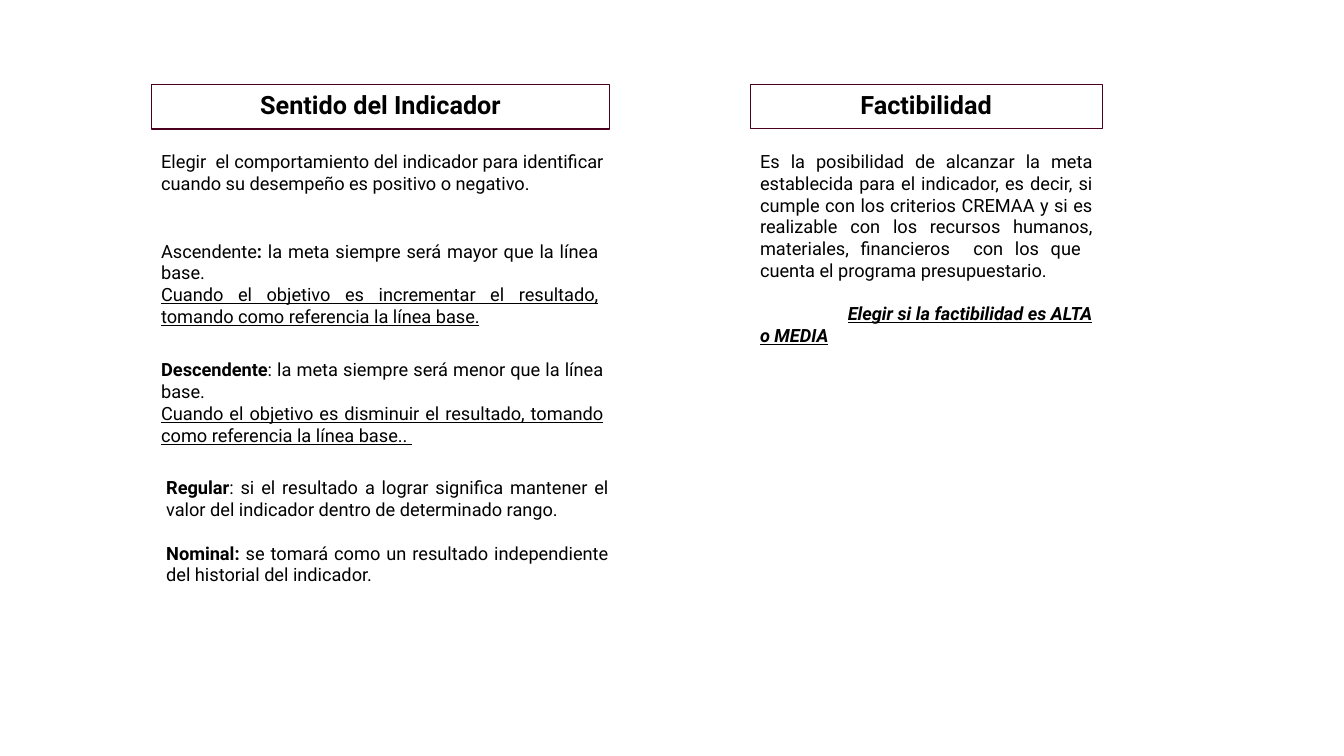
from pptx import Presentation
from pptx.dml.color import RGBColor
from pptx.enum import shapes, text
from pptx.util import Inches, Pt

LEFT, RIGHT = 1.5, 7.44      # column edges
HEAD, BODY = 0.84, 1.44      # row tops
LINE = 15.3                  # one body line, in points


def paint(code):
    return RGBColor.from_string(code)


class Deck:
    font, ink, edge = "Roboto", "000000", "4A001F"

    def __init__(self):
        self.prs = Presentation()
        self.prs.slide_width = Inches(13.33)
        self.prs.slide_height = Inches(7.5)
        self.slide = self.prs.slides.add_slide(self.prs.slide_layouts[5])

    def frame(self, shape):
        frame = shape.text_frame
        frame.word_wrap = True
        frame.auto_size = text.MSO_AUTO_SIZE.NONE
        frame.vertical_anchor = text.MSO_ANCHOR.TOP
        frame.margin_left = frame.margin_right = Inches(0.1)
        frame.margin_top = frame.margin_bottom = Inches(0.05)
        return frame

    def run(self, para, words, size, style=""):
        run = para.add_run()
        run.text = words
        font = run.font
        font.name, font.size = self.font, Pt(size)
        font.color.rgb = paint(self.ink)
        font.bold, font.italic = "b" in style, "i" in style
        font.underline = "u" in style

    def head(self, shape, words):
        shape.line.color.rgb = paint(self.edge)
        shape.line.width = Pt(0.75)
        shape.fill.background()
        para = self.frame(shape).paragraphs[0]
        para.alignment = text.PP_ALIGN.CENTER
        self.run(para, words, 18, "b")

    def title(self, x, y, w, words):
        shape = self.slide.shapes.title
        shape.left, shape.top = Inches(x), Inches(y)
        shape.width, shape.height = Inches(w), Inches(0.44)
        self.head(shape, words)

    def label(self, x, y, w, words):
        shape = self.slide.shapes.add_shape(
            shapes.MSO_SHAPE.RECTANGLE, Inches(x), Inches(y), Inches(w), Inches(0.44))
        shape.shadow.inherit = False
        self.head(shape, words)

    def body(self, x, y, w, h, paras, gap=0, indent=0):
        """Justified text; gap and indent apply to paragraphs after the first."""
        box = self.slide.shapes.add_textbox(Inches(x), Inches(y), Inches(w), Inches(h))
        frame = self.frame(box)
        for i, runs in enumerate(paras):
            para = frame.add_paragraph() if i else frame.paragraphs[0]
            para.alignment = text.PP_ALIGN.JUSTIFY
            if i and gap:
                para.space_before = Pt(gap)
            if i and indent:
                para._p.get_or_add_pPr().set("indent", str(Inches(indent)))
            for words, style in runs:
                self.run(para, words, 13, style)


def main():
    deck = Deck()

    # Headings
    deck.title(LEFT, HEAD, 4.55, "Sentido del Indicador")
    deck.label(RIGHT, HEAD, 3.49, "Factibilidad")

    # Indicator direction
    deck.body(LEFT, BODY, 4.58, 0.54, [
        [("Elegir  el comportamiento del indicador para identificar cuando su "
          "desempeño es positivo o negativo.", "")]])
    deck.body(LEFT, 2.33, 4.53, 0.98, [
        [("Ascendente", ""), (": ", "b"),
         ("la meta siempre será mayor que la línea base.", "")],
        [("Cuando el objetivo es incrementar el resultado, tomando como "
          "referencia la línea base.", "u")]])
    deck.body(LEFT, 3.51, 4.58, 0.98, [
        [("Descendente", "b"), (": la meta siempre será menor que la línea base.", "")],
        [("Cuando el objetivo es disminuir el resultado, tomando como "
          "referencia la línea base.. ", "u")]])
    deck.body(LEFT + 0.05, 4.68, 4.58, 1.2, [
        [("Regular", "b"),
         (": si el resultado a lograr significa mantener el valor del indicador "
          "dentro de determinado rango.", "")],
        [("Nominal: ", "b"),
         ("se tomará como un resultado independiente del historial del "
          "indicador.", "")]], gap=LINE)

    # Feasibility
    deck.body(RIGHT, BODY, 3.49, 1.85, [
        [("Es la posibilidad de alcanzar la meta establecida para el indicador, "
          "es decir, si cumple con los criterios CREMAA y si es realizable con "
          "los recursos humanos, materiales, financieros  con los que  cuenta "
          "el programa presupuestario.", "")],
        [("Elegir si la factibilidad es ALTA o MEDIA", "biu")]],
        gap=LINE, indent=0.87)

    deck.prs.save("out.pptx")


if __name__ == "__main__":
    main()
